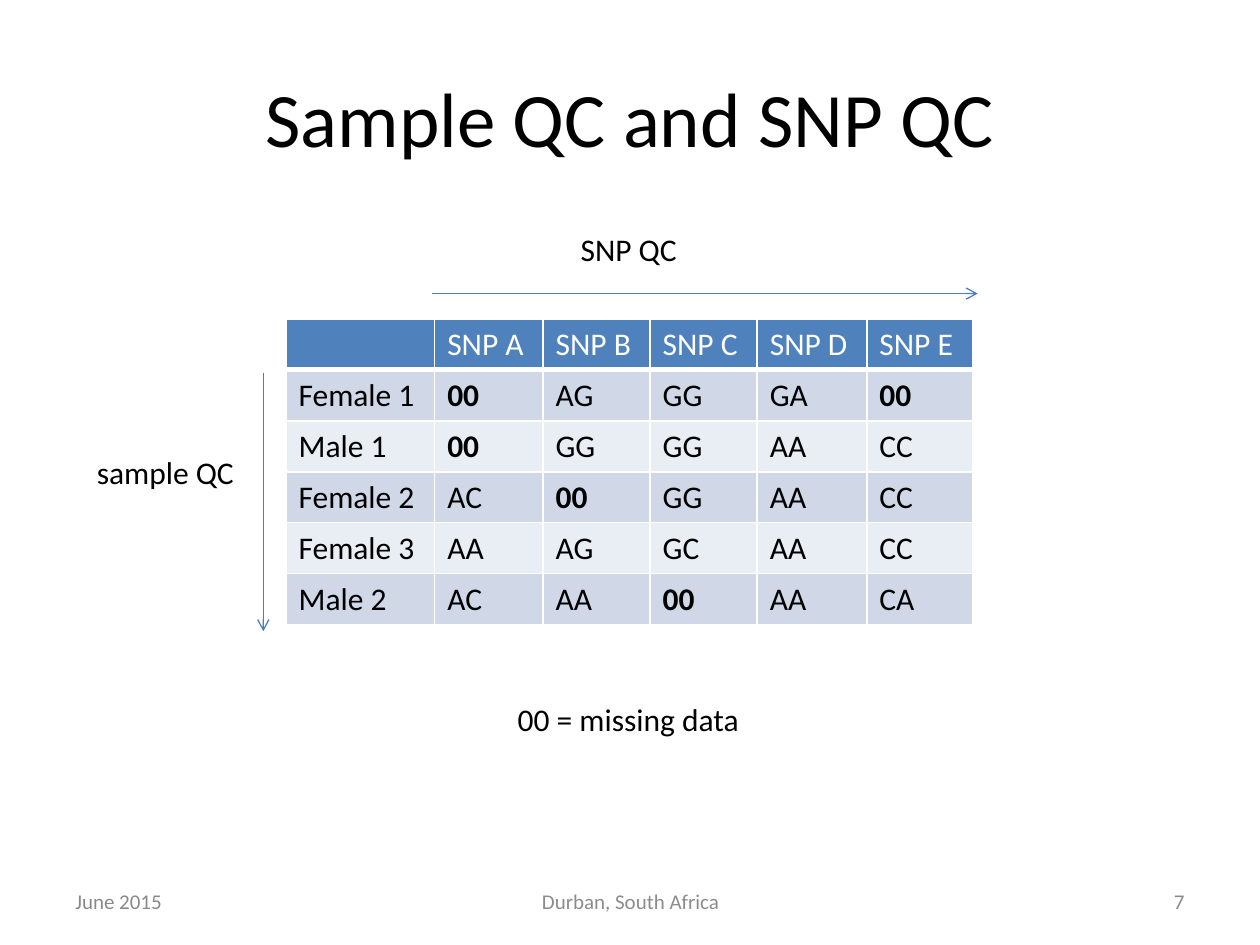
from lxml.etree import SubElement
from pptx import Presentation
from pptx.dml.color import RGBColor
from pptx.enum.shapes import MSO_CONNECTOR as Connector
from pptx.enum.text import MSO_ANCHOR as Anchor, PP_ALIGN as Align
from pptx.oxml.ns import qn
from pptx.util import Inches, Pt

FONT = "Calibri"
BLACK, WHITE, GREY = "000000", "FFFFFF", "898989"
HEADER_FILL, BAND_FILLS = "4F81BD", ("D0D8E8", "E9EDF4")
ARROW_COLOR = "4B7EBC"
MISSING = "00"
TABLE_LEFT, TABLE_TOP, ROW_HEIGHT = 2.27, 2.53, 0.405
COLUMN_WIDTHS = (1.18, 0.86, 0.85, 0.85, 0.87, 0.84)
GENOTYPES = (
    ("", "SNP A", "SNP B", "SNP C", "SNP D", "SNP E"),
    ("Female 1", "00", "AG", "GG", "GA", "00"),
    ("Male 1", "00", "GG", "GG", "AA", "CC"),
    ("Female 2", "AC", "00", "GG", "AA", "CC"),
    ("Female 3", "AA", "AG", "GC", "AA", "CC"),
    ("Male 2", "AC", "AA", "00", "AA", "CA"),
)
LABELS = (
    ("SNP QC", 4.51, 1.78, 0.97),
    ("sample QC", 0.67, 3.55, 1.3),
    ("00 = missing data", 4.01, 5.51, 1.98),
)
FOOTERS = (
    ("June 2015", 0.5, 2.33, Align.LEFT, GREY),
    ("Durban, South Africa", 3.42, 3.17, Align.CENTER, "8C8C8C"),
    ("7", 7.17, 2.33, Align.RIGHT, GREY),
)


def color(value):
    return RGBColor.from_string(value)


def write_text(frame, text, size=18, fill=BLACK, bold=False, align=Align.LEFT):
    paragraph = frame.paragraphs[0]
    paragraph.alignment = align
    run = paragraph.add_run()
    run.text = text
    run.font.name = FONT
    run.font.size = Pt(size)
    run.font.bold = bold
    run.font.color.rgb = color(fill)


def add_title(slide, text):
    title = slide.shapes.title
    title.left, title.top = Inches(0.5), Inches(0.3)
    title.width, title.height = Inches(9), Inches(1.25)
    title.text_frame.vertical_anchor = Anchor.MIDDLE
    write_text(title.text_frame, text, size=44, align=Align.CENTER)


def add_text_box(slide, text, left, top, width, wrap=False, anchor=Anchor.TOP, **text_format):
    box = slide.shapes.add_textbox(Inches(left), Inches(top), Inches(width), Inches(0.4))
    box.text_frame.word_wrap = wrap
    box.text_frame.vertical_anchor = anchor
    write_text(box.text_frame, text, **text_format)


def add_arrow(slide, start, end):
    points = [Inches(value) for value in (*start, *end)]
    arrow = slide.shapes.add_connector(Connector.STRAIGHT, *points)
    arrow.line.color.rgb = color(ARROW_COLOR)
    arrow.line.width = Pt(0.75)
    SubElement(arrow.line._get_or_add_ln(), qn("a:tailEnd"), type="arrow")
    SubElement(arrow._element.spPr, qn("a:effectLst"))


def set_borders(cell, top, bottom):
    properties = cell._tc.get_or_add_tcPr()
    for side, points in (("L", 1), ("R", 1), ("T", top), ("B", bottom)):
        line = SubElement(properties, qn(f"a:ln{side}"), w=str(Pt(points)))
        fill = SubElement(line, qn("a:solidFill"))
        SubElement(fill, qn("a:srgbClr"), val=WHITE)


def format_cell(cell, text, row):
    is_header = row == 0
    set_borders(cell, top=3 if row == 1 else 1, bottom=3 if is_header else 1)
    cell.fill.solid()
    cell.fill.fore_color.rgb = color(HEADER_FILL if is_header else BAND_FILLS[(row - 1) % 2])
    write_text(cell.text_frame, text, fill=WHITE if is_header else BLACK, bold=text == MISSING)


def add_genotype_table(slide):
    frame = slide.shapes.add_table(
        len(GENOTYPES), len(COLUMN_WIDTHS), Inches(TABLE_LEFT), Inches(TABLE_TOP),
        Inches(sum(COLUMN_WIDTHS)), Inches(ROW_HEIGHT * len(GENOTYPES)))
    table = frame.table
    for column, width in zip(table.columns, COLUMN_WIDTHS):
        column.width = Inches(width)
    for row, values in enumerate(GENOTYPES):
        table.rows[row].height = Inches(ROW_HEIGHT)
        for column, text in enumerate(values):
            format_cell(table.cell(row, column), text, row)


def main():
    presentation = Presentation()
    presentation.slide_width, presentation.slide_height = Inches(10), Inches(7.5)
    slide = presentation.slides.add_slide(presentation.slide_layouts[5])
    add_title(slide, "Sample QC and SNP QC")
    for text, left, width, align, fill in FOOTERS:
        add_text_box(slide, text, left, 6.95, width, wrap=True, anchor=Anchor.MIDDLE,
                     size=12, fill=fill, align=align)
    add_arrow(slide, (3.43, 2.33), (7.76, 2.33))
    add_arrow(slide, (2.09, 2.96), (2.09, 5.01))
    add_genotype_table(slide)
    for label in LABELS:
        add_text_box(slide, *label)
    presentation.save("out.pptx")


if __name__ == "__main__":
    main()
